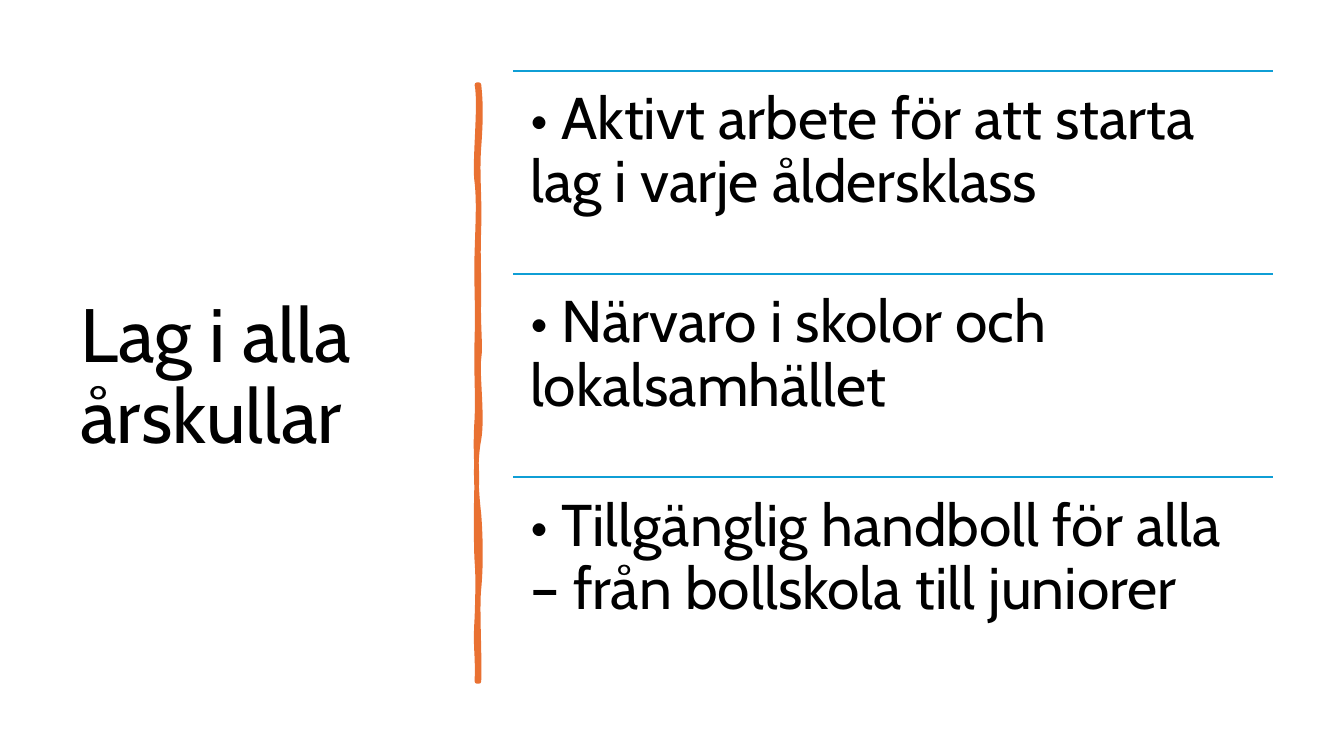
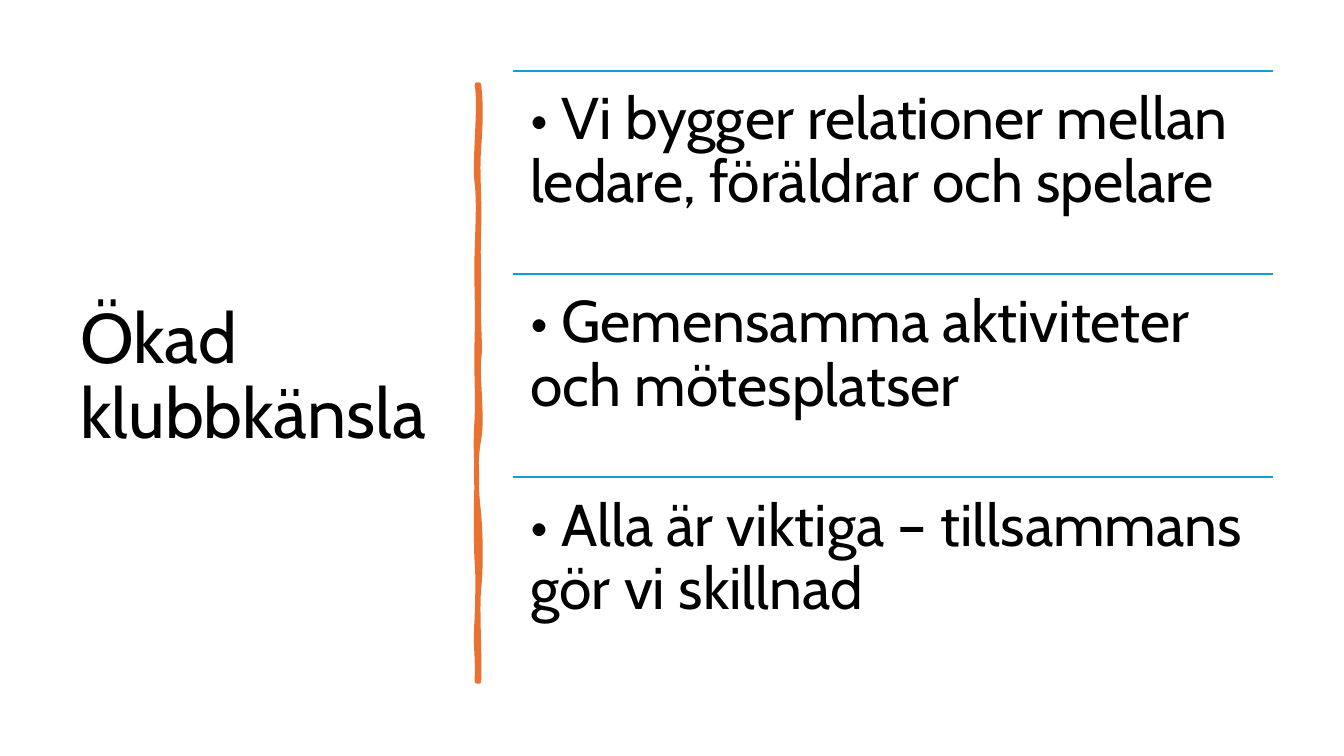
from lxml.etree import SubElement
from pptx import Presentation
from pptx.dml.color import RGBColor
from pptx.enum.shapes import MSO_CONNECTOR
from pptx.enum.text import MSO_ANCHOR, PP_ALIGN
from pptx.oxml.ns import qn
from pptx.util import Inches, Pt

COLORS = {"text": "000000", "brush": "E97132", "rule": "0F9ED5", "back": "FFFFFF"}

# Layout in inches
TOP = 0.7
TITLE_LEFT, TITLE_WIDTH, TITLE_HEIGHT = 0.7, 3.74, 6.11
POINT_LEFT, POINT_WIDTH = 5.09, 7.54
POINTS_HEIGHT = 6.05

# Hand-drawn divider: a start, then cubic curves (two controls and an end)
BRUSH_START = (4.75, 0.84)
BRUSH_EDGE = [
    (4.77, 1.02, 4.77, 1.19, 4.75, 1.46), (4.73, 1.73, 4.76, 1.95, 4.75, 2.26),
    (4.74, 2.57, 4.75, 2.62, 4.75, 2.94), (4.74, 3.25, 4.77, 3.42, 4.75, 3.56),
    (4.73, 3.7, 4.79, 4.14, 4.75, 4.36), (4.71, 4.57, 4.72, 4.84, 4.75, 5.1),
    (4.77, 5.36, 4.77, 5.64, 4.75, 5.84), (4.73, 6.03, 4.76, 6.5, 4.75, 6.76),
    (4.74, 6.76, 4.73, 6.76, 4.73, 6.76), (4.74, 6.46, 4.71, 6.44, 4.73, 6.13),
    (4.74, 5.83, 4.74, 5.7, 4.73, 5.57), (4.72, 5.44, 4.72, 4.95, 4.73, 4.77),
    (4.73, 4.59, 4.71, 4.45, 4.73, 4.15), (4.74, 3.86, 4.72, 3.73, 4.73, 3.35),
    (4.74, 2.98, 4.72, 2.81, 4.73, 2.5), (4.74, 2.18, 4.75, 2, 4.73, 1.81),
    (4.7, 1.63, 4.77, 1.04, 4.73, 0.84), (4.74, 0.84, 4.74, 0.84, 4.75, 0.84),
]
BRUSH_BODY = [
    (4.75, 1.15, 4.72, 1.25, 4.75, 1.52), (4.77, 1.79, 4.74, 1.97, 4.75, 2.08),
    (4.76, 2.2, 4.74, 2.55, 4.75, 2.94), (4.76, 3.33, 4.73, 3.43, 4.75, 3.62),
    (4.77, 3.81, 4.77, 3.97, 4.75, 4.3), (4.72, 4.63, 4.75, 4.74, 4.75, 5.16),
    (4.75, 5.57, 4.74, 5.53, 4.75, 5.78), (4.76, 6.03, 4.74, 6.47, 4.75, 6.76),
    (4.74, 6.75, 4.73, 6.75, 4.73, 6.76), (4.7, 6.49, 4.74, 6.32, 4.73, 6.13),
    (4.72, 5.95, 4.75, 5.69, 4.73, 5.39), (4.71, 5.1, 4.76, 5, 4.73, 4.71),
    (4.7, 4.42, 4.77, 4.2, 4.73, 3.86), (4.69, 3.51, 4.74, 3.25, 4.73, 3),
    (4.71, 2.75, 4.71, 2.59, 4.73, 2.38), (4.74, 2.16, 4.74, 1.85, 4.73, 1.64),
    (4.71, 1.43, 4.75, 1.21, 4.73, 0.84), (4.74, 0.84, 4.74, 0.84, 4.75, 0.84),
]

# Title, title size and points of each slide
SLIDES = [
    ("Lag i alla årskullar", 54, [
        "• Aktivt arbete för att starta lag i varje åldersklass",
        "• Närvaro i skolor och lokalsamhället",
        "• Tillgänglig handboll för alla – från bollskola till juniorer",
    ]),
    ("Ökad klubbkänsla", 50, [
        "• Vi bygger relationer mellan ledare, föräldrar och spelare",
        "• Gemensamma aktiviteter och mötesplatser",
        "• Alla är viktiga – tillsammans gör vi skillnad",
    ]),
]


def color(name):
    return RGBColor.from_string(COLORS[name])


class Deck:
    font = "Cabin"
    point_size = 42

    def __init__(self):
        self.prs = Presentation()
        self.prs.slide_width, self.prs.slide_height = Inches(13.33), Inches(7.5)
        self.slide = None

    def new_slide(self):
        self.slide = self.prs.slides.add_slide(self.prs.slide_layouts[6])
        fill = self.slide.background.fill
        fill.solid()
        fill.fore_color.rgb = color("back")

    def text(self, words, size, box, anchor, inset_x, inset_y):
        frame = self.slide.shapes.add_textbox(*map(Inches, box)).text_frame
        frame.word_wrap = True
        frame.vertical_anchor = anchor
        frame.margin_left = frame.margin_right = Inches(inset_x)
        frame.margin_top = frame.margin_bottom = Inches(inset_y)
        paragraph = frame.paragraphs[0]
        paragraph.alignment = PP_ALIGN.LEFT
        paragraph.line_spacing = 0.9
        run = paragraph.add_run()
        run.text = words
        run.font.name = self.font
        run.font.size = Pt(size)
        run.font.color.rgb = color("text")

    def title(self, words, size):
        box = (TITLE_LEFT, TOP, TITLE_WIDTH, TITLE_HEIGHT)
        self.text(words, size, box, MSO_ANCHOR.MIDDLE, 0.1, 0.05)

    def divider(self):
        # The curve ends set the frame
        builder = self.slide.shapes.build_freeform(*map(Inches, BRUSH_START))
        builder.add_line_segments(
            [(Inches(x), Inches(y)) for *_, x, y in BRUSH_EDGE], close=True)
        brush = builder.convert_to_shape()
        brush.shadow.inherit = False
        brush.fill.solid()
        brush.fill.fore_color.rgb = color("brush")
        brush.line.color.rgb = color("brush")
        brush.line.width = Pt(3.25)
        SubElement(brush.line._get_or_add_ln(), qn("a:round"))

        # Curved contours: one is only stroked, the other only filled
        contours = brush._element.spPr.find(qn("a:custGeom")).find(qn("a:pathLst"))
        for straight in list(contours):
            contours.remove(straight)
        for curves, style in ((BRUSH_EDGE, {"fill": "none"}),
                              (BRUSH_BODY, {"stroke": "0"})):
            contour = SubElement(contours, qn("a:path"), w=str(brush.width),
                                 h=str(brush.height), **style)
            for tag, numbers in [("a:moveTo", BRUSH_START),
                                 *(("a:cubicBezTo", curve) for curve in curves)]:
                step = SubElement(contour, qn(tag))
                for x, y in zip(numbers[::2], numbers[1::2]):
                    SubElement(step, qn("a:pt"), x=str(Inches(x) - brush.left),
                               y=str(Inches(y) - brush.top))
            SubElement(contour, qn("a:close"))

    def rule(self, y):
        line = self.slide.shapes.add_connector(
            MSO_CONNECTOR.STRAIGHT, Inches(POINT_LEFT), Inches(y),
            Inches(POINT_LEFT + POINT_WIDTH), Inches(y))
        line.line.color.rgb = color("rule")
        line.line.width = Pt(1.5)
        SubElement(line._element.spPr, qn("a:effectLst"))

    def points(self, sentences):
        height = POINTS_HEIGHT / len(sentences)
        for row, sentence in enumerate(sentences):
            y = TOP + row * height
            self.rule(y)
            box = (POINT_LEFT, y, POINT_WIDTH, height)
            self.text(sentence, self.point_size, box, MSO_ANCHOR.TOP, 0.17, 0.18)


def main():
    deck = Deck()
    for heading, heading_size, sentences in SLIDES:
        deck.new_slide()
        deck.title(heading, heading_size)
        deck.divider()
        deck.points(sentences)
    deck.prs.save("out.pptx")


if __name__ == "__main__":
    main()
